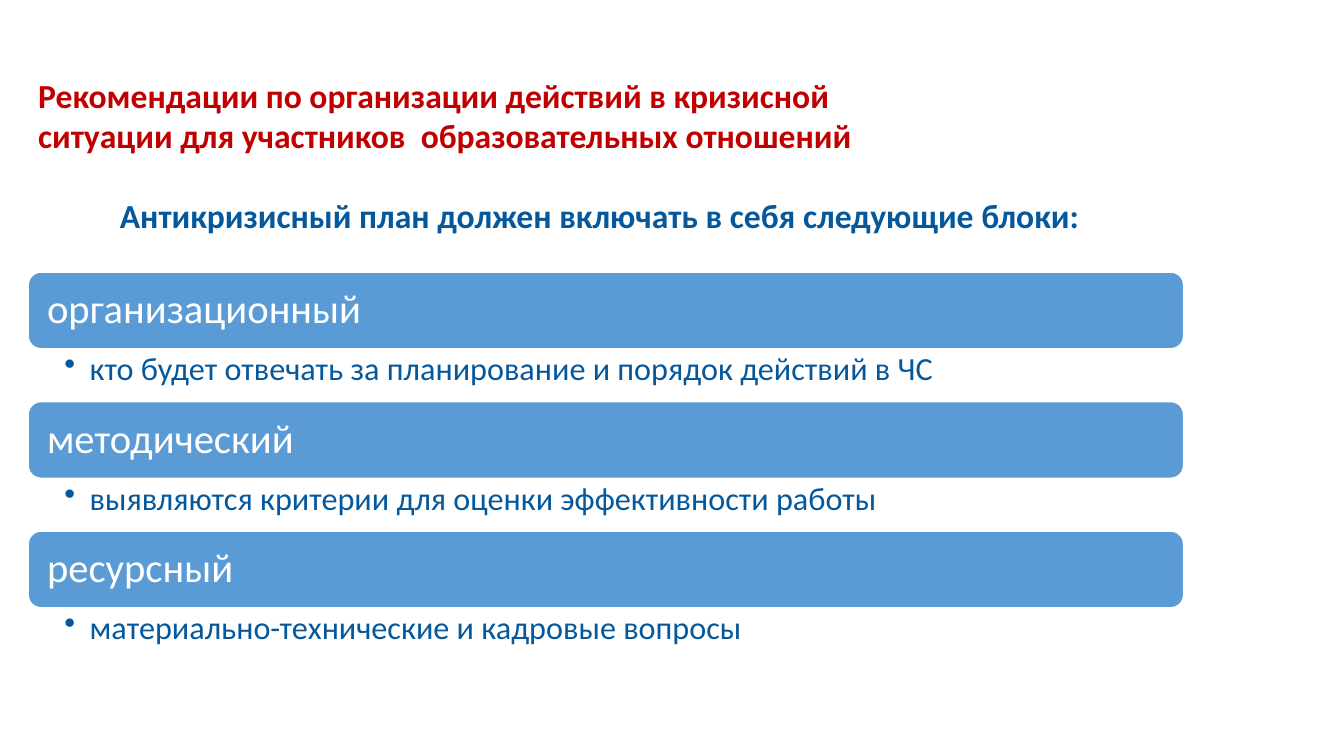
from dataclasses import dataclass

from lxml import etree
from pptx import Presentation
from pptx.dml.color import RGBColor
from pptx.enum.shapes import MSO_SHAPE
from pptx.enum.text import MSO_ANCHOR, PP_ALIGN
from pptx.oxml.ns import qn
from pptx.util import Emu, Inches, Pt

ROUND = MSO_SHAPE.ROUNDED_RECTANGLE
TOP, MIDDLE = MSO_ANCHOR.TOP, MSO_ANCHOR.MIDDLE
LEFT = PP_ALIGN.LEFT
WIDE, HIGH = Inches(13.33), Inches(7.5)
COL, ROW = WIDE / 100, HIGH / 100


@dataclass(frozen=True)
class Theme:
    """Colours, font and type sizes of the slide."""
    red: str = "C00000"
    navy: str = "05589C"
    blue: str = "5B9BD5"
    white: str = "FFFFFF"
    font: str = "Calibri"
    head: int = 24
    bar: int = 29
    note: int = 23


THEME = Theme()
EDGE, SPAN = 2.1, 85.97
START, STEP = 36, 17.13
BAR, NOTE = 10.13, 7.07
BLOCKS = (
    ("организационный", "кто будет отвечать за планирование и порядок действий в ЧС"),
    ("методический", "выявляются критерии для оценки эффективности работы"),
    ("ресурсный", "материально-технические и кадровые вопросы"),
)


def place(left, top, width, height):
    """Turn columns and rows of the grid into lengths."""
    return [Emu(round(n)) for n in (left * COL, top * ROW, width * COL, height * ROW)]


def bullet(para):
    """Give a paragraph a hanging round bullet."""
    props = para._p.get_or_add_pPr()
    props.set("lvl", "1")
    props.set("marL", str(Inches(0.25)))
    props.set("indent", str(-Inches(0.25)))
    etree.SubElement(props, qn("a:buChar")).set("char", "•")


def write(shape, text, *, size, color, bold=False, anchor=TOP,
          inset=(0.1, 0.05, 0.1, 0.05), space=1.0, dot=False):
    """Fill a shape with one formatted paragraph."""
    frame = shape.text_frame
    frame.word_wrap = True
    frame.vertical_anchor = anchor
    left, top, right, base = (Inches(n) for n in inset)
    frame.margin_left, frame.margin_top = left, top
    frame.margin_right, frame.margin_bottom = right, base
    para = frame.paragraphs[0]
    if dot:
        bullet(para)
    para.alignment = LEFT
    para.line_spacing = space
    run = para.add_run()
    run.text = text
    run.font.name = THEME.font
    run.font.size = Pt(size)
    run.font.bold = bold
    run.font.color.rgb = RGBColor.from_string(color)


def add_text(slide, area, text, **style):
    """Add a text box on the grid."""
    write(slide.shapes.add_textbox(*place(*area)), text, **style)


def add_bar(slide, area, text):
    """Add a rounded bar with the name of a block."""
    bar = slide.shapes.add_shape(ROUND, *place(*area))
    bar.shadow.inherit = False
    bar.fill.solid()
    bar.fill.fore_color.rgb = RGBColor.from_string(THEME.blue)
    bar.line.color.rgb = RGBColor.from_string(THEME.white)
    bar.line.width = Pt(1)
    write(bar, text, size=THEME.bar, color=THEME.white, anchor=MIDDLE,
          inset=(0.15, 0.12, 0.15, 0.12), space=0.9)


def add_block(slide, top, name, note):
    """Add a bar and the bulleted note under it."""
    add_bar(slide, (EDGE, top, SPAN, BAR), name)
    add_text(slide, (EDGE, top + BAR, SPAN, NOTE), note, size=THEME.note,
             color=THEME.navy, inset=(0.36, 0.04, 0.23, 0.04), space=0.9, dot=True)


def main():
    """Build the slide and save it."""
    deck = Presentation()
    deck.slide_width, deck.slide_height = WIDE, HIGH
    slide = deck.slides.add_slide(deck.slide_layouts[6])
    add_text(slide, (EDGE, 9.2, 67.37, 12.13),
             "Рекомендации по организации действий в кризисной ситуации "
             "для участников  образовательных отношений",
             size=THEME.head, color=THEME.red, bold=True)
    add_text(slide, (8.18, 25.07, 81.32, 6.67),
             "Антикризисный план должен включать в себя следующие блоки:",
             size=THEME.head, color=THEME.navy, bold=True)
    for i, (name, note) in enumerate(BLOCKS):
        add_block(slide, START + i * STEP, name, note)
    deck.save("out.pptx")


if __name__ == "__main__":
    main()
